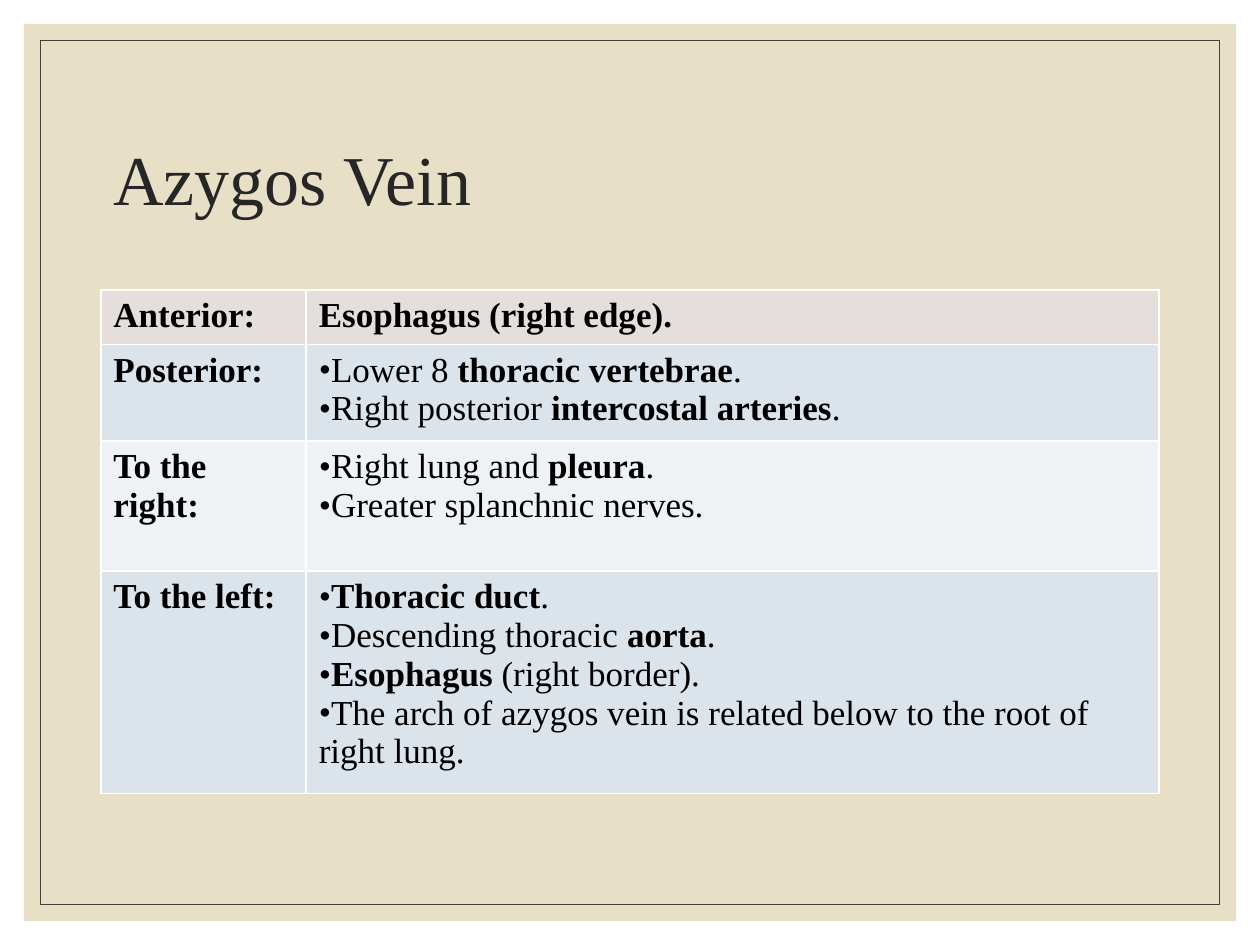
from dataclasses import dataclass
from lxml import etree
from pptx import Presentation
from pptx.dml.color import RGBColor
from pptx.enum.shapes import MSO_SHAPE
from pptx.enum.text import MSO_ANCHOR
from pptx.oxml.ns import qn
from pptx.util import Inches, Pt

RECT = MSO_SHAPE.RECTANGLE
MIDDLE = MSO_ANCHOR.MIDDLE
FONT = "Times New Roman"
COLORS = {
    "panel": "E7E0C7", "frame": "404040", "title": "262626", "text": "000000",
    "header": "E4DFDC", "band": "DCE4EB", "light": "EEF2F5",
}


@dataclass
class Panel:
    inset: float
    fill: str | None = None
    line: str | None = None


@dataclass
class Relation:
    side: str
    items: list[str]
    fill: str
    height: float
    bulleted: bool = True


PANELS = [Panel(0.19, fill="panel"), Panel(0.32, line="frame")]

# Text between ** marks is bold.
RELATIONS = [
    Relation("Anterior:", ["**Esophagus (right edge).**"], "header", 0.41, False),
    Relation("Posterior:", ["Lower 8 **thoracic vertebrae**.",
                            "Right posterior **intercostal arteries**."], "band", 0.71),
    Relation("To the right:", ["Right lung and **pleura**.",
                               "Greater splanchnic nerves."], "light", 1.03),
    Relation("To the left:", ["**Thoracic duct**.",
                              "Descending thoracic **aorta**.",
                              "**Esophagus** (right border).",
                              "The arch of azygos vein is related below to the root "
                              "of right lung."], "band", 1.64),
]
COLUMN_WIDTHS = [1.63, 6.77]


def rgb(name: str) -> RGBColor:
    return RGBColor.from_string(COLORS[name])


def add_run(p, text: str, color: str, **formats) -> None:
    r = p.add_run()
    r.text = text
    r.font.color.rgb = rgb(color)
    for name, value in {"name": FONT, **formats}.items():
        setattr(r.font, name, value)


def add_panel(s, prs, panel: Panel) -> None:
    inset = Inches(panel.inset)
    sp = s.shapes.add_shape(RECT, inset, inset, prs.slide_width - 2 * inset,
                            prs.slide_height - 2 * inset)
    sp.shadow.inherit = False
    if panel.fill:
        sp.fill.solid()
        sp.fill.fore_color.rgb = rgb(panel.fill)
    else:
        sp.fill.background()
    if panel.line:
        sp.line.color.rgb = rgb(panel.line)
        sp.line.width = Pt(0.5)
    else:
        sp.line.fill.background()


def add_title(s, text: str) -> None:
    sp = s.shapes.add_textbox(Inches(0.8), Inches(0.7), Inches(8.4), Inches(1.5))
    tf = sp.text_frame
    tf.word_wrap = True
    tf.vertical_anchor = MIDDLE
    p = tf.paragraphs[0]
    p.line_spacing = 0.9
    add_run(p, text, "title", size=Pt(40))


def add_bullet(p) -> None:
    p_pr = p._p.get_or_add_pPr()
    p_pr.set("marL", "0")
    p_pr.set("indent", "0")
    etree.SubElement(p_pr, qn("a:buFont"), typeface=FONT)
    etree.SubElement(p_pr, qn("a:buChar"), char="•")


def fill_cell(cell, items: list[str], fill: str, bulleted: bool) -> None:
    cell.fill.solid()
    cell.fill.fore_color.rgb = rgb(fill)
    tf = cell.text_frame
    for i, item in enumerate(items):
        p = tf.add_paragraph() if i else tf.paragraphs[0]
        if bulleted:
            add_bullet(p)
        for j, part in enumerate(item.split("**")):
            if part:
                add_run(p, part, "text", size=Pt(20), bold=j % 2 == 1)


def add_relations_table(s, relations: list[Relation]) -> None:
    """Add the table; its default style draws the white borders."""
    height = sum(relation.height for relation in relations)
    table = s.shapes.add_table(len(relations), len(COLUMN_WIDTHS), Inches(0.8),
                               Inches(2.3), Inches(sum(COLUMN_WIDTHS)),
                               Inches(height)).table
    for column, width in zip(table.columns, COLUMN_WIDTHS):
        column.width = Inches(width)
    for row, relation in zip(table.rows, relations):
        row.height = Inches(relation.height)
        side, details = row.cells
        fill_cell(side, [f"**{relation.side}**"], relation.fill, False)
        fill_cell(details, relation.items, relation.fill, relation.bulleted)


def main() -> None:
    prs = Presentation()
    prs.slide_width, prs.slide_height = Inches(10), Inches(7.5)
    s = prs.slides.add_slide(prs.slide_layouts[6])
    for panel in PANELS:
        add_panel(s, prs, panel)
    add_title(s, "Azygos Vein")
    add_relations_table(s, RELATIONS)
    prs.save("out.pptx")


if __name__ == "__main__":
    main()
